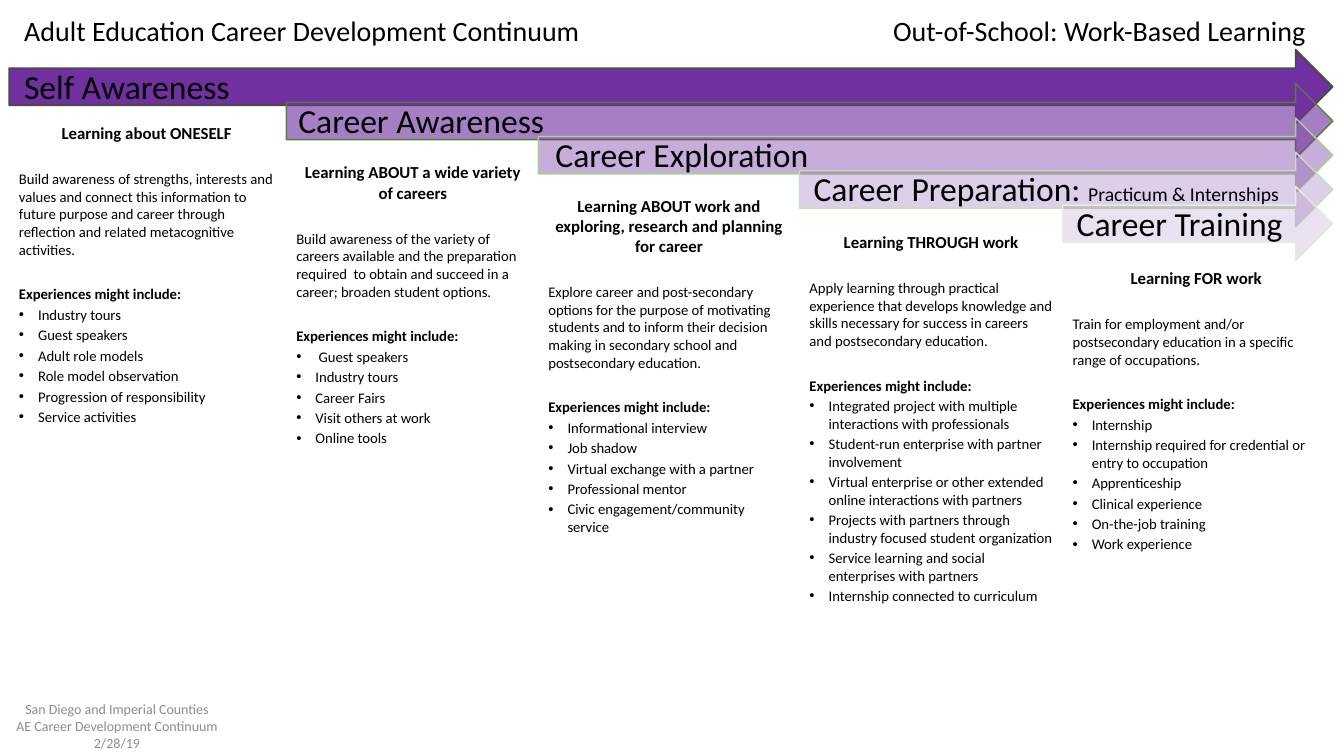
from dataclasses import dataclass

from lxml import etree
from pptx import Presentation
from pptx import util as u
from pptx.dml.color import RGBColor
from pptx.enum import shapes, text
from pptx.oxml import ns


@dataclass(frozen=True)
class Theme:
    font: str = "Calibri"
    ink: str = "000000"
    muted: str = "8C8C8C"
    purple: str = "7030A0"
    title: float = 20
    stage: float = 24
    note: float = 14
    heading: float = 12
    body: float = 10.5
    footer: float = 10
    item_gap: float = 2
    section_gap: float = 19.3


THEME = Theme()
TITLE = "Adult Education Career Development Continuum\tOut-of-School: Work-Based Learning"
EXPERIENCES = "Experiences might include:"
FOOTER = ["San Diego and Imperial Counties", "AE Career Development Continuum 2/28/19"]

STAGES = [
    {
        "name": "Self Awareness", "note": "", "opacity": 100, "outline": "385723",
        "left": 0.09, "label": (0.14, 4.42), "detail": (1.17, 2.73, 4.17),
        "heading": "Learning about ONESELF",
        "summary": "Build awareness of strengths, interests and values and connect this information to future purpose and career through reflection and related metacognitive activities.",
        "items": ["Industry tours", "Guest speakers", "Adult role models", "Role model observation",
                  "Progression of responsibility", "Service activities"],
    },
    {
        "name": "Career Awareness", "note": "", "opacity": 62, "outline": "548235",
        "left": 2.84, "label": (2.86, 4.42), "detail": (1.56, 2.51, 3.58),
        "heading": "Learning ABOUT a wide variety of careers",
        "summary": "Build awareness of the variety of careers available and the preparation required  to obtain and succeed in a career; broaden student options.",
        "items": [" Guest speakers", "Industry tours", "Career Fairs", "Visit others at work", "Online tools"],
    },
    {
        "name": "Career Exploration", "note": "", "opacity": 39, "outline": "A9D18E",
        "left": 5.34, "label": (5.41, 4.42), "detail": (1.89, 2.59, 3.49),
        "heading": "Learning ABOUT work and exploring, research and planning for career",
        "summary": "Explore career and post-secondary options for the purpose of motivating students and to inform their decision making in secondary school and postsecondary education.",
        "items": ["Informational interview", "Job shadow", "Virtual exchange with a partner",
                  "Professional mentor", "Civic engagement/community service"],
    },
    {
        "name": "Career Preparation: ", "note": "Practicum & Internships", "opacity": 23, "outline": "C5E0B4",
        "left": 7.93, "label": (7.97, 4.85), "detail": (2.25, 2.61, 4.03),
        "heading": "Learning THROUGH work",
        "summary": "Apply learning through practical experience that develops knowledge and skills necessary for success in careers and postsecondary education.",
        "items": ["Integrated project with multiple interactions with professionals",
                  "Student-run enterprise with partner involvement",
                  "Virtual enterprise or other extended online interactions with partners",
                  "Projects with partners through industry focused student organization",
                  "Service learning and social enterprises with partners",
                  "Internship connected to curriculum"],
    },
    {
        "name": "Career Training", "note": "", "opacity": 14, "outline": "E2F0D9",
        "left": 10.54, "label": (10.58, 2.32), "detail": (2.61, 2.65, 2.96),
        "heading": "Learning FOR work",
        "summary": "Train for employment and/or postsecondary education in a specific range of occupations.",
        "items": ["Internship", "Internship required for credential or entry to occupation", "Apprenticeship",
                  "Clinical experience", "On-the-job training", "Work experience"],
    },
]

ARROW_TOP, ARROW_RIGHT, ARROW_HEIGHT = 0.49, 13.22, 0.74
LABEL_TOP, LABEL_HEIGHT, STEP = 0.6, 0.5, 0.34
TITLE_TAB, BULLET_INDENT = 12.71, 0.19


def place(shape, left, top, width, height):
    shape.left, shape.top = u.Inches(left), u.Inches(top)
    shape.width, shape.height = u.Inches(width), u.Inches(height)


def add_run(paragraph, words, size, color=THEME.ink, bold=False):
    run = paragraph.add_run()
    run.text = words
    run.font.name = THEME.font
    run.font.size = u.Pt(size)
    run.font.bold = bold
    run.font.color.rgb = RGBColor.from_string(color)


def add_textbox(slide, left, top, width, height):
    box = slide.shapes.add_textbox(*map(u.Inches, (left, top, width, height)))
    box.text_frame.word_wrap = True
    return box.text_frame


def next_paragraph(frame):
    first = frame.paragraphs[0]
    return frame.add_paragraph() if first.runs else first


def add_line(frame, words, size, gap=0, bold=False, centred=False, color=THEME.ink):
    paragraph = next_paragraph(frame)
    paragraph.space_after = u.Pt(gap)
    if centred:
        paragraph.alignment = text.PP_ALIGN.CENTER
    add_run(paragraph, words, size, color, bold)
    return paragraph


def add_bullet(paragraph):
    properties = paragraph._p.get_or_add_pPr()
    indent = u.Inches(BULLET_INDENT)
    properties.set("marL", str(indent))
    properties.set("indent", str(-indent))
    etree.SubElement(properties, ns.qn("a:buFont")).set("typeface", "Arial")
    etree.SubElement(properties, ns.qn("a:buChar")).set("char", "•")


def add_title(slide):
    title = slide.shapes.title
    place(title, 0.14, 0.08, 12.99, 0.44)
    frame = title.text_frame
    frame.word_wrap = True
    frame.auto_size = text.MSO_AUTO_SIZE.NONE
    frame.vertical_anchor = text.MSO_ANCHOR.TOP
    paragraph = frame.paragraphs[0]
    paragraph.alignment = text.PP_ALIGN.LEFT
    tabs = etree.SubElement(paragraph._p.get_or_add_pPr(), ns.qn("a:tabLst"))
    tab = etree.SubElement(tabs, ns.qn("a:tab"))
    tab.set("pos", str(u.Inches(TITLE_TAB)))
    tab.set("algn", "r")
    add_run(paragraph, TITLE, THEME.title)


def add_arrow(slide, stage, top):
    bounds = (stage["left"], top, ARROW_RIGHT - stage["left"], ARROW_HEIGHT)
    arrow = slide.shapes.add_shape(shapes.MSO_SHAPE.RIGHT_ARROW, *map(u.Inches, bounds))
    arrow.shadow.inherit = False
    arrow.fill.solid()
    arrow.fill.fore_color.rgb = RGBColor.from_string(THEME.purple)
    arrow.line.color.rgb = RGBColor.from_string(stage["outline"])
    arrow.line.width = u.Pt(1)
    if stage["opacity"] < 100:
        color = arrow.element.spPr.find(ns.qn("a:solidFill")).find(ns.qn("a:srgbClr"))
        etree.SubElement(color, ns.qn("a:alpha")).set("val", str(stage["opacity"] * 1000))


def add_label(slide, stage, top):
    left, width = stage["label"]
    paragraph = add_textbox(slide, left, top, width, LABEL_HEIGHT).paragraphs[0]
    add_run(paragraph, stage["name"], THEME.stage)
    if stage["note"]:
        add_run(paragraph, stage["note"], THEME.note)


def add_detail(slide, stage):
    top, width, height = stage["detail"]
    frame = add_textbox(slide, stage["left"], top, width, height)
    add_line(frame, stage["heading"], THEME.heading, THEME.section_gap, bold=True, centred=True)
    add_line(frame, stage["summary"], THEME.body, THEME.section_gap)
    add_line(frame, EXPERIENCES, THEME.body, THEME.item_gap, bold=True)
    for item in stage["items"]:
        add_bullet(add_line(frame, item, THEME.body, THEME.item_gap))


def main():
    presentation = Presentation()
    presentation.slide_width, presentation.slide_height = u.Inches(13.33), u.Inches(7.5)
    slide = presentation.slides.add_slide(presentation.slide_layouts[5])
    add_title(slide)
    for index, stage in enumerate(STAGES):
        add_arrow(slide, stage, ARROW_TOP + index * STEP)
    for index, stage in enumerate(STAGES):
        add_label(slide, stage, LABEL_TOP + index * STEP)
        add_detail(slide, stage)
    footer = add_textbox(slide, 0, 6.9, 2.32, 0.6)
    for words in FOOTER:
        add_line(footer, words, THEME.footer, centred=True, color=THEME.muted)
    presentation.save("out.pptx")


if __name__ == "__main__":
    main()
